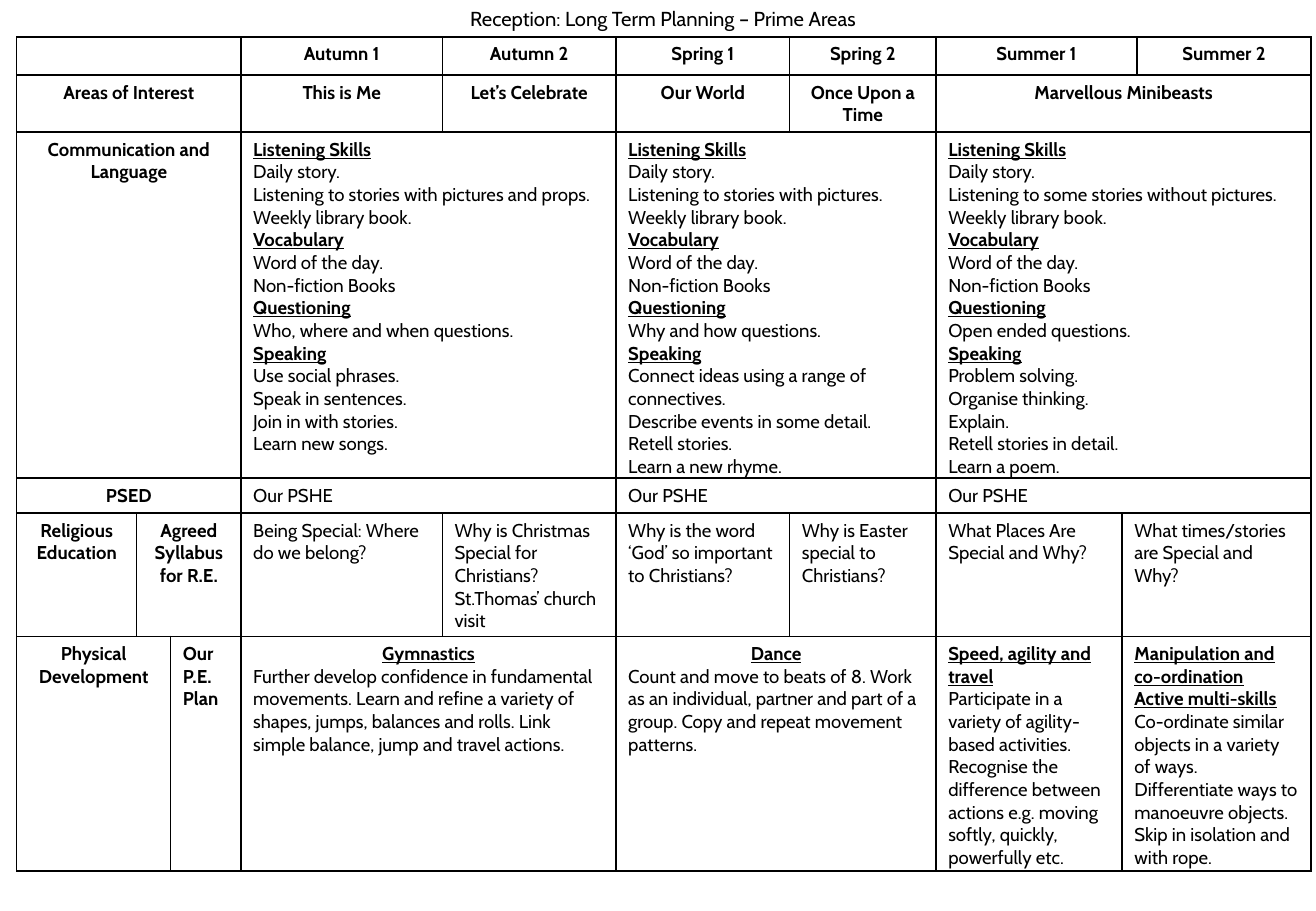
from dataclasses import dataclass

from lxml.etree import SubElement
from pptx import Presentation
from pptx.dml.color import RGBColor
from pptx.enum.text import MSO_ANCHOR as Anchor, MSO_AUTO_SIZE as AutoSize, PP_ALIGN as Align
from pptx.oxml.ns import qn
from pptx.util import Cm, Pt

BLACK = RGBColor(0, 0, 0)
WHITE = RGBColor(255, 255, 255)
TITLE_ONLY = 5

COLUMN_WIDTHS = [2.51, 0.71, 1.47, 4.21, 3.63, 3.63, 3.06, 3.89, 0.31, 3.64]
ROW_HEIGHTS = [0.8, 1.19, 7.23, 0.73, 2.58, 4.91]


@dataclass
class Entry:
    """One table cell; lines that start with # are underlined headings."""
    text: str
    span: int = 1
    bold: bool = False
    align: Align = Align.LEFT
    heading_align: Align = Align.LEFT


def label(text, span=1):
    return Entry(text, span, bold=True, align=Align.CENTER)


def skills(listening, questions, speaking, span=2):
    """Language goals of one term; only three parts change between terms."""
    return Entry(f"""#Listening Skills
Daily story.
{listening}
Weekly library book.
#Vocabulary
Word of the day.
Non-fiction Books
#Questioning
{questions}
#Speaking
{speaking}""", span)


PLAN = [
    [label("", 3), label("Autumn 1"), label("Autumn 2"), label("Spring 1"),
     label("Spring 2"), label("Summer 1", 2), label("Summer 2")],
    [label("Areas of Interest", 3), label("This is Me"), label("Let’s Celebrate"),
     label("Our World"), label("Once Upon a Time"), label("Marvellous Minibeasts", 3)],
    [label("Communication and Language", 3),
     skills("Listening to stories with pictures and props.",
            "Who, where and when questions.",
            "Use social phrases.\nSpeak in sentences.\n"
            "Join in with stories.\nLearn new songs."),
     skills("Listening to stories with pictures.",
            "Why and how questions.",
            "Connect ideas using a range of connectives.\n"
            "Describe events in some detail.\nRetell stories.\nLearn a new rhyme."),
     skills("Listening to some stories without pictures.",
            "Open ended questions.",
            "Problem solving.\nOrganise thinking.\nExplain.\n"
            "Retell stories in detail.\nLearn a poem.", 3)],
    [label("PSED", 3), *[Entry("Our PSHE", span) for span in (2, 2, 3)]],
    [label("Religious Education"), label("Agreed Syllabus for R.E.", 2),
     Entry("Being Special: Where do we belong?"),
     Entry("Why is Christmas Special for Christians?\nSt.Thomas’ church visit"),
     Entry("Why is the word ‘God’ so important to Christians?"),
     Entry("Why is Easter special to Christians?"),
     Entry("What Places Are Special and Why?"),
     Entry("What times/stories are Special and Why?", 2)],
    [label("Physical Development", 2), Entry("Our P.E. Plan", bold=True),
     Entry("#Gymnastics\nFurther develop confidence in fundamental movements. "
           "Learn and refine a variety of shapes, jumps, balances and rolls. "
           "Link simple balance, jump and travel actions.",
           2, heading_align=Align.CENTER),
     Entry("#Dance\nCount and move to beats of 8. Work as an individual, partner "
           "and part of a group. Copy and repeat movement patterns.",
           2, heading_align=Align.CENTER),
     Entry("#Speed, agility and travel\nParticipate in a variety of agility-based "
           "activities. Recognise the difference between actions e.g. moving "
           "softly, quickly, powerfully etc."),
     Entry("#Manipulation and co-ordination\n#Active multi-skills\n"
           "Co-ordinate similar objects in a variety of ways. Differentiate ways "
           "to manoeuvre objects. Skip in isolation and with rope.", 2)],
]


def write(para, text, size=11, bold=False, underline=False, align=Align.LEFT):
    para.alignment = align
    span = para.add_run()
    span.text = text
    font = span.font
    font.name, font.size = "Cabin", Pt(size)
    font.bold, font.underline = bold, underline
    font.color.rgb = BLACK


class PlanningPage:
    def __init__(self, deck):
        self.border_width = Pt(1)
        self.page = deck.slides.add_slide(deck.slide_layouts[TITLE_ONLY])
        self.page.background.fill.solid()
        self.page.background.fill.fore_color.rgb = WHITE

    def title(self, text, left, top, width, height):
        box = self.page.shapes.title
        box.left, box.top, box.width, box.height = map(Cm, (left, top, width, height))
        frame = box.text_frame
        frame.auto_size = AutoSize.NONE
        frame.word_wrap = True
        frame.vertical_anchor = Anchor.MIDDLE
        frame.margin_top = frame.margin_bottom = 0
        write(frame.paragraphs[0], text, size=12, align=Align.CENTER)

    def table(self, plan, left, top):
        table = self.page.shapes.add_table(
            len(ROW_HEIGHTS), len(COLUMN_WIDTHS), Cm(left), Cm(top),
            Cm(sum(COLUMN_WIDTHS)), Cm(sum(ROW_HEIGHTS))).table
        table.first_row = table.horz_banding = False
        for column, width in zip(table.columns, COLUMN_WIDTHS):
            column.width = Cm(width)
        for row, height in zip(table.rows, ROW_HEIGHTS):
            row.height = Cm(height)
        for cell in table.iter_cells():
            self.style_cell(cell)
        for row, entries in enumerate(plan):
            column = 0
            for entry in entries:
                cell = table.cell(row, column)
                column += entry.span
                if entry.span > 1:
                    cell.merge(table.cell(row, column - 1))
                if entry.text:
                    self.fill_cell(cell, entry)

    def style_cell(self, cell):
        """Set borders, margins and a small height for cells without text."""
        cell.margin_bottom = 0
        cell.vertical_anchor = Anchor.TOP
        properties = cell._tc.get_or_add_tcPr()
        for side in ("a:lnL", "a:lnR", "a:lnT", "a:lnB"):
            line = SubElement(properties, qn(side), w=str(self.border_width))
            paint = SubElement(line, qn("a:solidFill"))
            SubElement(paint, qn("a:srgbClr"), val=str(BLACK))
        cell.fill.background()
        SubElement(cell.text_frame.paragraphs[0]._p, qn("a:endParaRPr"), sz="1100")

    def fill_cell(self, cell, entry):
        frame = cell.text_frame
        for number, line in enumerate(entry.text.split("\n")):
            para = frame.add_paragraph() if number else frame.paragraphs[0]
            heading = line.startswith("#")
            write(para, line.removeprefix("#"), bold=heading or entry.bold,
                  underline=heading,
                  align=entry.heading_align if heading else entry.align)


def main():
    deck = Presentation()
    deck.slide_width, deck.slide_height = Cm(27.51), Cm(19.05)
    planning = PlanningPage(deck)
    planning.title("Reception: Long Term Planning – Prime Areas", 5.84, 0, 16.05, 0.77)
    planning.table(PLAN, 0.35, 0.77)
    deck.save("out.pptx")


if __name__ == "__main__":
    main()
